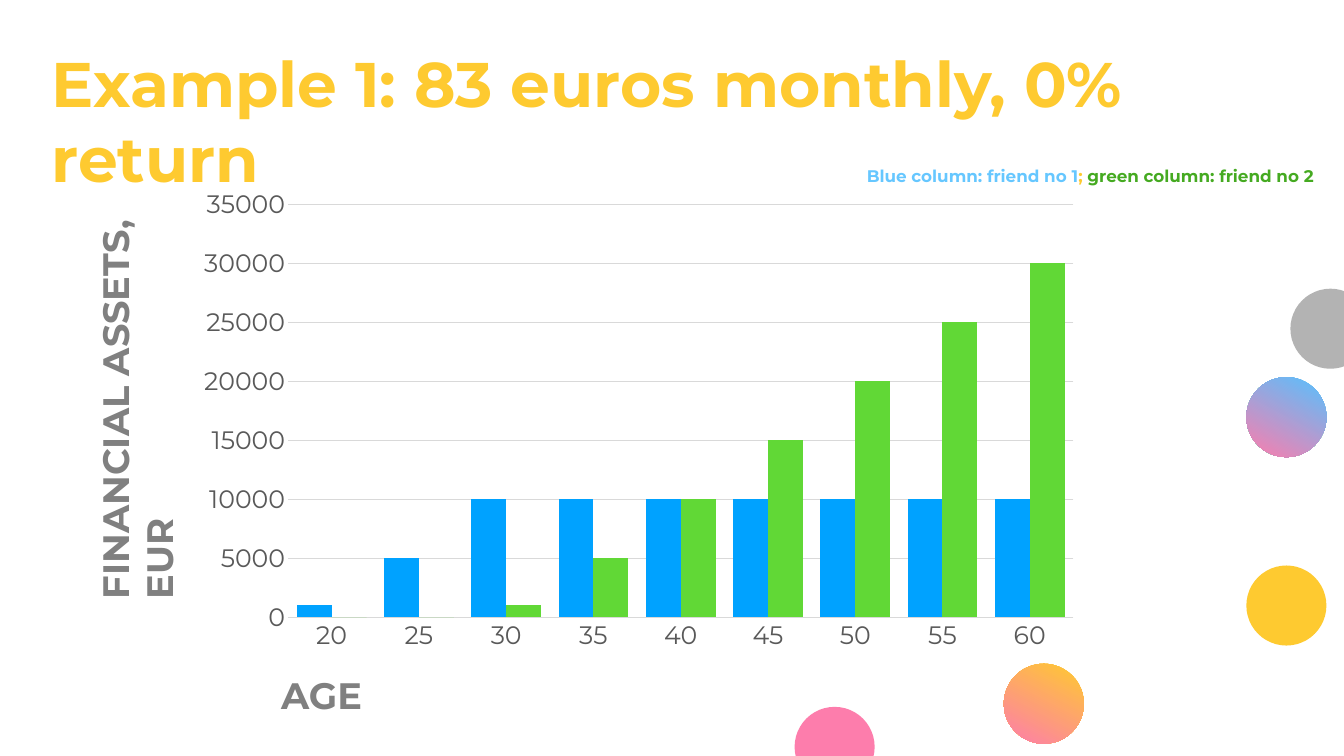
from dataclasses import dataclass

from lxml import etree
from pptx import Presentation
from pptx.chart.data import CategoryChartData
from pptx.dml.color import RGBColor
from pptx.enum import chart as ch, shapes, text
from pptx.oxml import ns
from pptx.util import Cm, Pt


@dataclass(frozen=True)
class Theme:
    font: str = "Montserrat"
    title: int = 60
    axis_title: int = 35
    tick: int = 24
    key: int = 16
    yellow: str = "FECA30"
    pink: str = "FD7DAC"
    sky: str = "56C1FF"
    silver: str = "B3B3B3"
    gray: str = "808080"
    tick_gray: str = "595959"
    grid: str = "D9D9D9"
    blue: str = "00A2FF"
    green: str = "61D836"
    key_blue: str = "66C7FF"
    key_green: str = "45AA21"


T = Theme()
AGES = range(20, 61, 5)
FRIEND_1 = [1000, 5000] + [10000] * 7
FRIEND_2 = [0, 0, 1000] + list(range(5000, 30001, 5000))


def style_font(font, size, color, bold=False):
    font.name = T.font
    font.size = Pt(size)
    font.bold = bold
    font.color.rgb = RGBColor.from_string(color)


def write_runs(tf, runs, size, anchor, align=text.PP_ALIGN.LEFT):
    tf.word_wrap = True
    tf.auto_size = text.MSO_AUTO_SIZE.NONE
    tf.vertical_anchor = anchor
    p = tf.paragraphs[0]
    p.alignment = align
    for words, color in runs:
        r = p.add_run()
        r.text = words
        style_font(r.font, size, color, bold=True)


def add_label(s, box, runs, size, align=text.PP_ALIGN.LEFT):
    sp = s.shapes.add_textbox(*map(Cm, box))
    write_runs(sp.text_frame, runs, size, text.MSO_ANCHOR.MIDDLE, align)
    return sp


def add_circles(s, box):
    x, y, w, h = box
    d = 2.69
    circles = [
        (w - 1.8, 9.7, [T.silver]),
        (w - 3.28, 19, [T.yellow]),
        (26.7, h - 1.65, [T.pink]),
        (w - 3.28, 12.67, [T.sky, T.pink]),
        (33.73, h - 3.1, [T.yellow, T.pink]),
    ]
    for left, top, colors in circles:
        sp = s.shapes.add_shape(
            shapes.MSO_SHAPE.OVAL, Cm(x + left), Cm(y + top), Cm(d), Cm(d))
        sp.shadow.inherit = False
        sp.line.fill.background()
        if len(colors) == 1:
            sp.fill.solid()
            sp.fill.fore_color.rgb = RGBColor.from_string(colors[0])
        else:
            sp.fill.gradient()
            sp.fill.gradient_angle = 360 - 118
            for stop, color in zip(sp.fill.gradient_stops, colors):
                stop.color.rgb = RGBColor.from_string(color)


def add_heading(s, box):
    x, y, w, h = box
    sp = s.shapes.title
    sp.left, sp.top, sp.width, sp.height = map(Cm, (x, y, w - 2, h))
    tf = sp.text_frame
    tf.margin_left = tf.margin_right = tf.margin_top = tf.margin_bottom = Cm(0.13)
    write_runs(tf, [("Example 1: 83 euros monthly, 0% return", T.yellow)],
               T.title, text.MSO_ANCHOR.TOP)
    key = [("Blue column: friend no 1", T.key_blue), ("; ", T.yellow),
           ("green column: friend no 2", T.key_green)]
    add_label(s, (x + w - 18, y + 4.07, 18, 1), key, T.key,
              text.PP_ALIGN.RIGHT)


def set_plot_layout(chart, **fractions):
    plot_area = chart.plots[0]._element.getparent()
    for old in plot_area.findall(ns.qn("c:layout")):
        plot_area.remove(old)
    layout = etree.Element(ns.qn("c:layout"))
    manual = etree.SubElement(layout, ns.qn("c:manualLayout"))
    settings = dict(layoutTarget="inner", xMode="edge", yMode="edge", **fractions)
    for name, value in settings.items():
        etree.SubElement(manual, ns.qn(f"c:{name}")).set("val", str(value))
    plot_area.insert(0, layout)


def add_assets_chart(s, box):
    data = CategoryChartData()
    data.categories = [str(age) for age in AGES]
    data.add_series("Series 1", FRIEND_1)
    data.add_series("Series 2", FRIEND_2)
    chart = s.shapes.add_chart(
        ch.XL_CHART_TYPE.COLUMN_CLUSTERED, *map(Cm, box), data).chart
    chart.has_legend = False
    chart.has_title = False
    style_font(chart.font, T.tick, T.tick_gray)
    set_plot_layout(chart, x=0.127, y=0.046, w=0.724, h=0.838)

    plot = chart.plots[0]
    plot.gap_width = 50
    plot.overlap = 0
    plot.vary_by_categories = False
    for series, color in zip(plot.series, (T.blue, T.green)):
        series.format.fill.solid()
        series.format.fill.fore_color.rgb = RGBColor.from_string(color)

    cat, val = chart.category_axis, chart.value_axis
    for axis in (cat, val):
        axis.major_tick_mark = axis.minor_tick_mark = ch.XL_TICK_MARK.NONE
        style_font(axis.tick_labels.font, T.tick, T.tick_gray)
    val.minimum_scale, val.maximum_scale, val.major_unit = 0, 35000, 5000
    val.format.line.fill.background()
    val.has_major_gridlines = True
    for line in (cat.format.line, val.major_gridlines.format.line):
        line.width = Pt(0.75)
        line.color.rgb = RGBColor.from_string(T.grid)


def add_chart_region(s, box):
    x, y, w, h = box
    add_assets_chart(s, (x + 5.05, y, w - 5.05, h - 1.62))
    sp = add_label(s, (x - 2.54, y + 6.7, 14.3, 0.86),
                   [("FINANCIAL ASSETS, EUR", T.gray)], T.axis_title)
    sp.rotation = 270
    add_label(s, (x + 9.2, y + h - 1.85, 14.86, 1.85),
              [("AGE", T.gray)], T.axis_title)


def main():
    prs = Presentation()
    prs.slide_width, prs.slide_height = Cm(45.16), Cm(25.4)
    s = prs.slides.add_slide(prs.slide_layouts[5])
    add_circles(s, (0, 0, 45.16, 25.4))
    add_heading(s, (1.6, 1.35, 42.8, 5))
    add_chart_region(s, (0, 6.1, 41.5, 18.18))
    prs.save("out.pptx")


if __name__ == "__main__":
    main()
